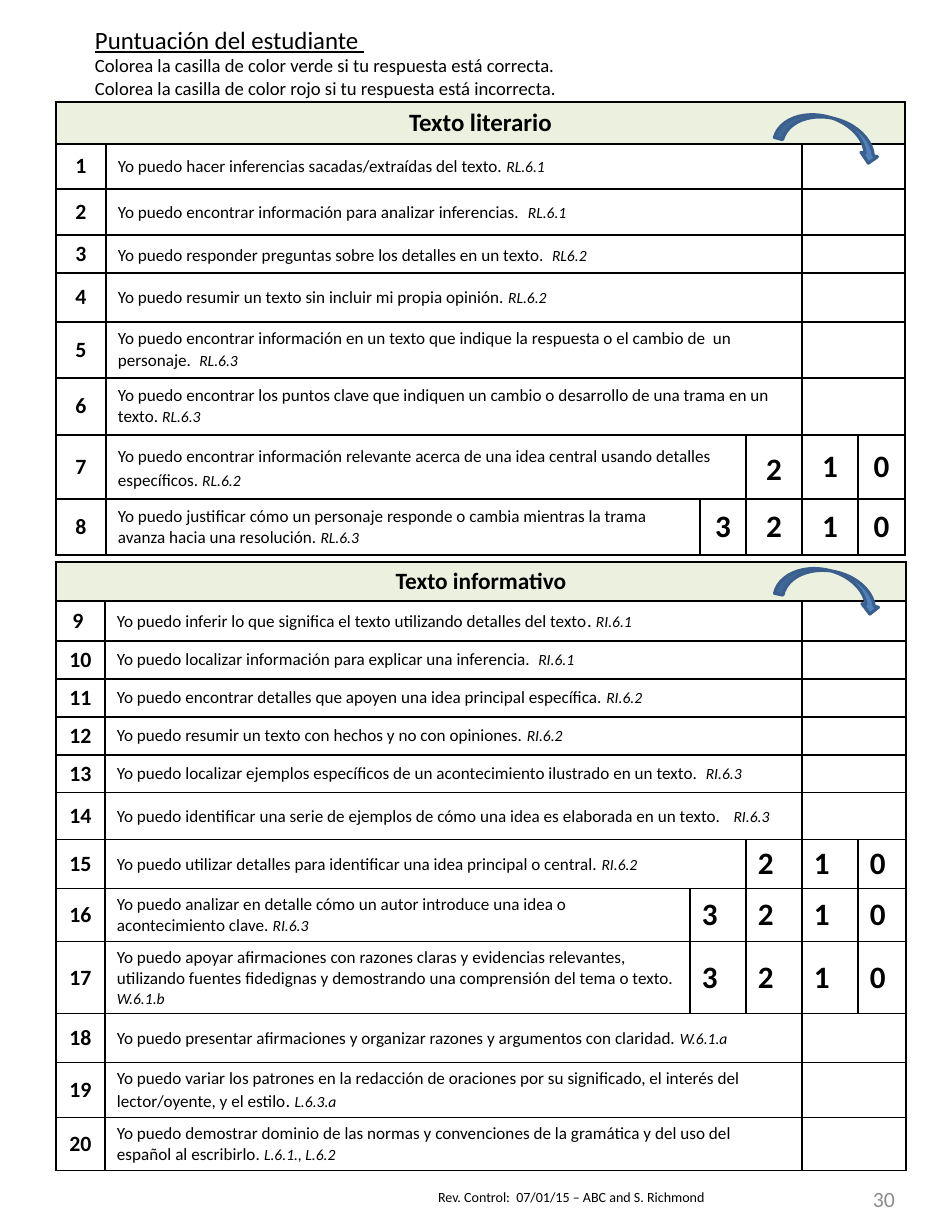
"""Build the student scoring sheet with its two checklist tables."""
import pptx
import pptx.dml.color
import pptx.enum.shapes
import pptx.enum.text
import pptx.oxml
import pptx.oxml.ns
import pptx.util

RGBColor = pptx.dml.color.RGBColor
Align = pptx.enum.text.PP_ALIGN
Anchor = pptx.enum.text.MSO_ANCHOR

BLACK = RGBColor(0x00, 0x00, 0x00)
WHITE = RGBColor(0xFF, 0xFF, 0xFF)
GREEN = RGBColor(0xEB, 0xF1, 0xDE)
GRAY = RGBColor(0x8C, 0x8C, 0x8C)
BLUE = RGBColor(0x4F, 0x81, 0xBD)
DARK_BLUE = RGBColor(0x3A, 0x5F, 0x8C)

LITERARY_COLUMNS = [50, 594, 46, 56, 56, 47]
LITERARY_ROWS = [
    (45, "1", "Yo puedo hacer inferencias sacadas/extraídas del texto. ", "", "RL.6.1", ""),
    (46, "2", "Yo puedo encontrar información para analizar inferencias.", "  ", "RL.6.1", ""),
    (38, "3", "Yo puedo responder preguntas sobre los detalles en un texto.  ", "", "RL6.2", ""),
    (49, "4", "Yo puedo resumir un texto sin incluir mi propia opinión. ", "", "RL.6.2", ""),
    (56, "5", "Yo puedo encontrar información en un texto que indique la respuesta "
     "o el cambio de  un personaje. ", " ", "RL.6.3", ""),
    (57, "6", "Yo puedo encontrar los puntos clave que indiquen un cambio o desarrollo "
     "de una trama en un texto. ", "", "RL.6.3", ""),
    (64, "7", "Yo puedo encontrar información relevante acerca de una idea central "
     "usando detalles específicos. ", "", "RL.6.2", "210"),
    (56, "8", "Yo puedo justificar cómo un personaje responde o cambia mientras la trama "
     "avanza hacia una resolución. ", "", "RL.6.3", "3210"),
]

INFORMATIVE_COLUMNS = [49, 585, 56, 56, 56, 48]
INFORMATIVE_ROWS = [
    (40, "9 ", "Yo puedo inferir lo que significa el texto utilizando detalles del texto",
     ". ", "RI.6.1", ""),
    (38, "10", "Yo puedo localizar información para explicar una inferencia.  ", "", "RI.6.1", ""),
    (38, "11", "Yo puedo encontrar detalles que apoyen una idea principal específica. ",
     "", "RI.6.2", ""),
    (38, "12", "Yo puedo resumir un texto con hechos y no con opiniones. ", "", "RI.6.2", ""),
    (38, "13", "Yo puedo localizar ejemplos específicos de un acontecimiento ilustrado "
     "en un texto.  ", "", "RI.6.3", ""),
    (47, "14", "Yo puedo identificar una serie de ejemplos de cómo una idea es elaborada "
     "en un texto. ", "  ", "RI.6.3", ""),
    (49, "15", "Yo puedo utilizar detalles para identificar una idea principal o central. ",
     "", "RI.6.2", "210"),
    (53, "16", "Yo puedo analizar en detalle cómo un autor introduce una idea o "
     "acontecimiento clave. ", "", "RI.6.3", "3210"),
    (72, "17", "Yo puedo apoyar afirmaciones con razones claras y evidencias relevantes, "
     "utilizando fuentes fidedignas y demostrando una comprensión del tema o texto. ",
     "", "W.6.1.b", "3210"),
    (49, "18", "Yo puedo presentar afirmaciones y organizar razones y argumentos con claridad. ",
     "", "W.6.1.a", ""),
    (55, "19", "Yo puedo variar los patrones en la redacción de oraciones por su significado, "
     "el interés del lector/oyente, y el estilo", ". ", "L.6.3.a", ""),
    (53, "20", "Yo puedo demostrar dominio de las normas y convenciones de la gramática "
     "y del uso del español al escribirlo. ", "", "L.6.1., L.6.2", ""),
]


class Sheet:
    """Hold the page style and add each kind of element to the slide."""

    font = "Calibri"
    scale = 914400 / 112

    def __init__(self, deck):
        deck.slide_width, deck.slide_height = self.px(952), self.px(1232)
        self.slide = deck.slides.add_slide(deck.slide_layouts[6])

    def px(self, length):
        return pptx.util.Emu(round(length * self.scale))

    def place(self, *lengths):
        return [self.px(length) for length in lengths]

    def style(self, para, size, align=Align.LEFT, bold=False, color=BLACK):
        para.alignment = align
        para.font.name = self.font
        para.font.size = pptx.util.Pt(size)
        para.font.bold = bold
        para.font.color.rgb = color

    def text(self, place, lines, align=Align.LEFT, anchor=Anchor.TOP, color=BLACK):
        frame = self.slide.shapes.add_textbox(*self.place(*place)).text_frame
        frame.word_wrap = True
        frame.vertical_anchor = anchor
        for index, (words, size, underline) in enumerate(lines):
            para = frame.add_paragraph() if index else frame.paragraphs[0]
            self.style(para, size, align, color=color)
            para.font.underline = underline
            para.add_run().text = words

    def arrow(self, left, top, angle):
        arrow = self.slide.shapes.add_shape(
            pptx.enum.shapes.MSO_SHAPE.CURVED_DOWN_ARROW, *self.place(left, top, 106, 34))
        arrow.rotation = angle
        arrow.shadow.inherit = False
        arrow.fill.solid()
        arrow.fill.fore_color.rgb = BLUE
        arrow.line.color.rgb = DARK_BLUE
        arrow.line.width = pptx.util.Pt(2)

    def frame_cell(self, cell, fill):
        cell.margin_top = cell.margin_bottom = 0
        properties = cell._tc.get_or_add_tcPr()
        for side in ("lnL", "lnR", "lnT", "lnB"):
            properties.append(pptx.oxml.parse_xml(
                f'<a:{side} {pptx.oxml.ns.nsdecls("a")} w="12700"><a:solidFill>'
                f'<a:srgbClr val="{BLACK}"/></a:solidFill></a:{side}>'))
        cell.fill.solid()
        cell.fill.fore_color.rgb = fill

    def cell_para(self, cell, size, align=Align.LEFT, bold=False):
        cell.margin_left = cell.margin_right = self.px(12)
        cell.margin_top = cell.margin_bottom = self.px(5)
        cell.vertical_anchor = Anchor.MIDDLE
        para = cell.text_frame.paragraphs[0]
        self.style(para, size, align, bold)
        return para

    def checklist(self, top, title, title_size, title_height, columns, rows, score_align, loose=()):
        heights = [title_height] + [row[0] for row in rows]
        table = self.slide.shapes.add_table(
            len(heights), len(columns), *self.place(56, top, sum(columns), sum(heights))).table
        table.first_row = table.horz_banding = False
        for column, width in zip(table.columns, columns):
            column.width = self.px(width)
        for index, height in enumerate(heights):
            table.rows[index].height = self.px(height)
            for cell in table.rows[index].cells:
                self.frame_cell(cell, WHITE if index else GREEN)
        last = len(columns) - 1
        table.cell(0, 0).merge(table.cell(0, last))
        self.cell_para(table.cell(0, 0), title_size, Align.CENTER, True).add_run().text = title
        for index, (_, number, words, gap, code, scores) in enumerate(rows, 1):
            text_end = last - (len(scores) or 2)
            if text_end > 1:
                table.cell(index, 1).merge(table.cell(index, text_end))
            if not scores:
                table.cell(index, last - 1).merge(table.cell(index, last))
            self.cell_para(table.cell(index, 0), 14, Align.CENTER, True).add_run().text = number
            para = self.cell_para(table.cell(index, 1), 11)
            if number in loose:
                para.line_spacing = 1.15
            for part, size in ((words, 11), (gap, 12), (code, 10)):
                if part:
                    span = para.add_run()
                    span.text = part
                    span.font.size = pptx.util.Pt(size)
                    span.font.italic = part == code
            for column, score in enumerate(scores, text_end + 1):
                para = self.cell_para(table.cell(index, column), 20, score_align, True)
                para.add_run().text = score
                if number in loose and score == "2":
                    para.line_spacing = 1.15


def main():
    deck = pptx.Presentation()
    sheet = Sheet(deck)
    sheet.text((427, 1183, 476, 29),
               [("Rev. Control:  07/01/15 – ABC and S. Richmond", 9, False)])
    sheet.text((803, 1166, 103, 66), [("30", 14, False)], Align.RIGHT, Anchor.MIDDLE, GRAY)
    sheet.checklist(562, "Texto informativo", 15, 39, INFORMATIVE_COLUMNS, INFORMATIVE_ROWS,
                    Align.LEFT)
    sheet.checklist(102, "Texto literario", 16, 42, LITERARY_COLUMNS, LITERARY_ROWS,
                    Align.CENTER, loose=("3", "7"))
    sheet.text((84, 19, 784, 115), [
        ("Puntuación del estudiante ", 16, True),
        ("Colorea la casilla de color verde si tu respuesta está correcta.", 12, False),
        ("Colorea la casilla de color rojo si tu respuesta está incorrecta.", 12, False),
    ])
    sheet.arrow(777, 118, 15.3)
    sheet.arrow(777, 571, 12.3)
    deck.save("out.pptx")


if __name__ == "__main__":
    main()
